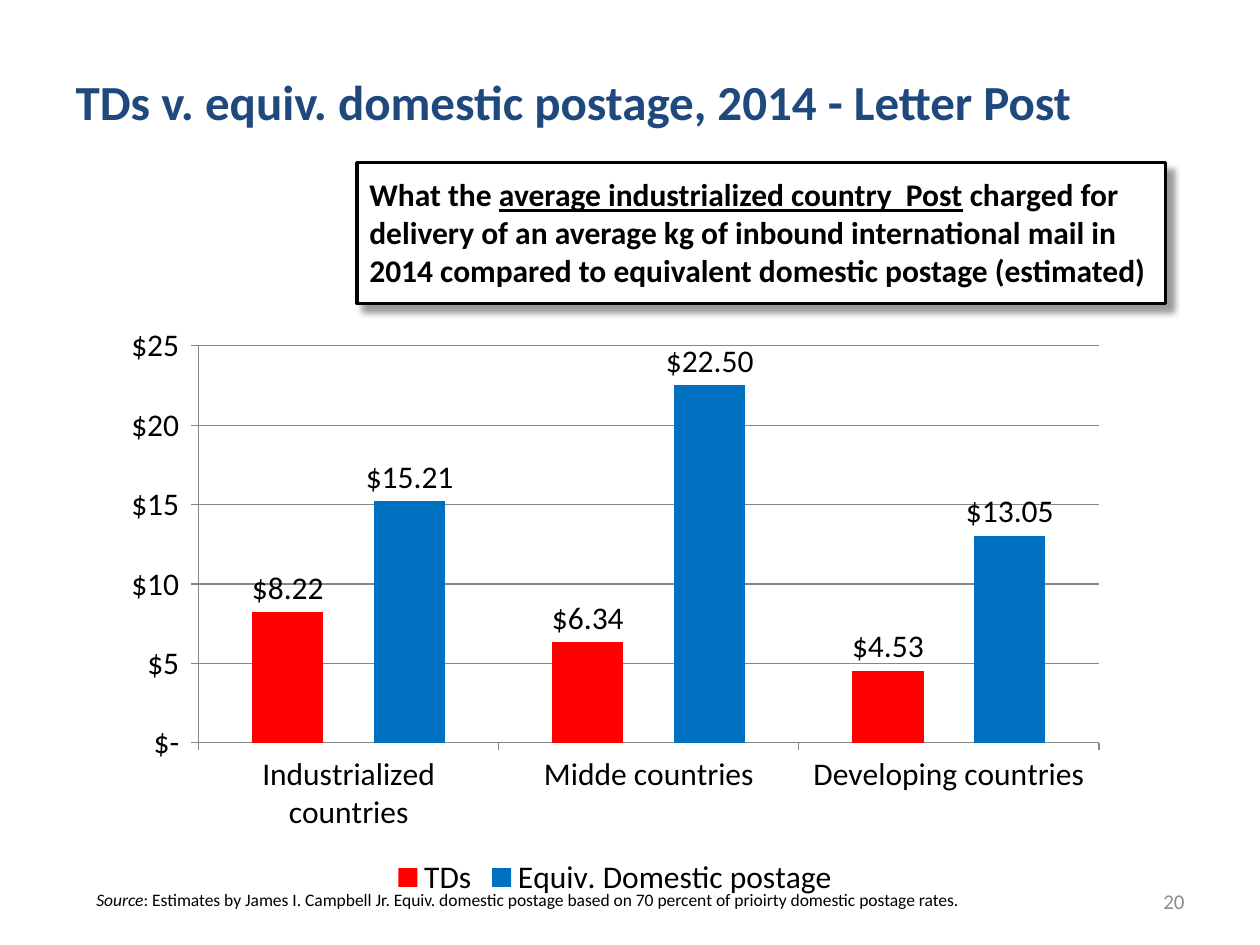
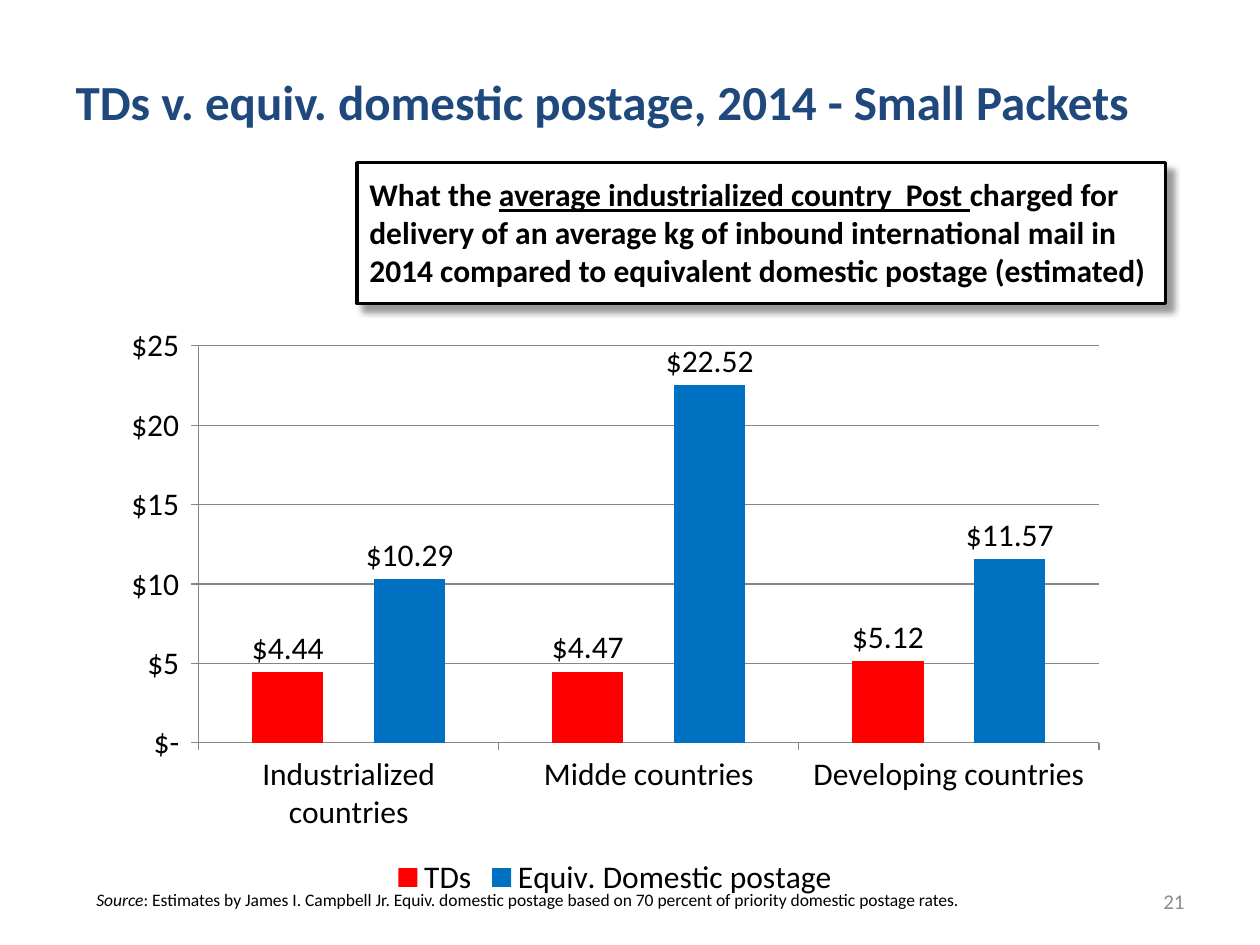
from lxml import etree
from pptx import Presentation
from pptx.chart.data import CategoryChartData
from pptx.dml.color import RGBColor
from pptx.enum.chart import XL_CHART_TYPE, XL_LABEL_POSITION, XL_LEGEND_POSITION, XL_TICK_MARK
from pptx.enum.shapes import MSO_SHAPE
from pptx.enum.text import MSO_ANCHOR, PP_ALIGN
from pptx.oxml.ns import qn
from pptx.util import Pt

FONT = "Calibri"
COLORS = {
    "title": "1F497D",
    "text": "000000",
    "paper": "FFFFFF",
    "number": "8C8C8C",
    "grid": "868686",
    "tds": "FF0000",
    "domestic": "0070C0",
}

# Boxes: left, top, width, height in points
TITLE_BOX = (36, 28.8, 648, 57.6)
CALLOUT_BOX = (204, 93, 462, 80.5)
CHART_BOX = (63.5, 180, 576, 336)
SOURCE_BOX = (48, 504.7, 606, 19.4)
NUMBER_BOX = (516, 500.5, 168, 28.8)

CATEGORIES = ["Industrialized countries", "Midde countries", "Developing countries"]
SLIDES = [
    {
        "title": "TDs v. equiv. domestic postage, 2014 - Letter Post",
        "callout": ["What the ", "average industrialized country  Post", " charged for"],
        "tds": [8.22, 6.34, 4.53],
        "domestic": [15.21, 22.50, 13.05],
        "rates": "prioirty",
        "number": 20,
    },
    {
        "title": "TDs v. equiv. domestic postage, 2014 - Small Packets",
        "callout": ["What the ", "average industrialized country  Post ", "charged for"],
        "tds": [4.44, 4.47, 5.12],
        "domestic": [10.29, 22.52, 11.57],
        "rates": "priority",
        "number": 21,
    },
]
CALLOUT_END = (" delivery of an average kg of inbound international mail in 2014"
               " compared to equivalent domestic postage (estimated)")


def rgb(name):
    return RGBColor.from_string(COLORS[name])


def style(font, size, color="text", bold=False):
    font.name, font.size, font.bold = FONT, Pt(size), bold
    font.color.rgb = rgb(color)


def add_run(p, text, size, **kwargs):
    r = p.add_run()
    r.text = text
    style(r.font, size, **kwargs)
    return r


def add_text_frame(slide, box):
    tf = slide.shapes.add_textbox(*map(Pt, box)).text_frame
    tf.word_wrap = True
    return tf


def add_title(slide, box, text):
    sp = slide.shapes.title
    sp.left, sp.top, sp.width, sp.height = map(Pt, box)
    tf = sp.text_frame
    tf.text = text
    tf.vertical_anchor = MSO_ANCHOR.MIDDLE
    p = tf.paragraphs[0]
    p.alignment = PP_ALIGN.LEFT
    style(p.runs[0].font, 28, "title", bold=True)


def add_drop_shadow(sp):
    sp.shadow.inherit = False
    effects = sp._element.spPr.find(qn("a:effectLst"))
    shadow = etree.SubElement(effects, qn("a:outerShdw"), blurRad=str(Pt(4)), dist=str(Pt(5)),
                              dir=str(45 * 60000), algn="tl", rotWithShape="0")
    color = etree.SubElement(shadow, qn("a:srgbClr"), val=COLORS["text"])
    etree.SubElement(color, qn("a:alpha"), val="40000")


def add_callout(slide, box, parts):
    """Bordered box whose second text part is underlined."""
    sp = slide.shapes.add_shape(MSO_SHAPE.RECTANGLE, *map(Pt, box))
    sp.fill.solid()
    sp.fill.fore_color.rgb = rgb("paper")
    sp.line.color.rgb = rgb("text")
    sp.line.width = Pt(2)
    add_drop_shadow(sp)
    tf = sp.text_frame
    tf.word_wrap = True
    tf.vertical_anchor = MSO_ANCHOR.TOP
    tf.margin_left = tf.margin_top = tf.margin_right = tf.margin_bottom = Pt(7.2)
    p = tf.paragraphs[0]
    p.alignment = PP_ALIGN.LEFT
    before, underlined, after = parts
    add_run(p, before, 18, bold=True)
    add_run(p, underlined, 18, bold=True).font.underline = True
    add_run(p, after + CALLOUT_END, 18, bold=True)


def add_postage_chart(slide, box, tds, domestic):
    data = CategoryChartData()
    data.categories = CATEGORIES
    data.add_series("TDs", tds)
    data.add_series("Equiv. Domestic postage", domestic)
    chart = slide.shapes.add_chart(XL_CHART_TYPE.COLUMN_CLUSTERED, *map(Pt, box), data).chart
    style(chart.font, 18)
    chart.has_title = False
    chart.has_legend = True
    chart.legend.position = XL_LEGEND_POSITION.BOTTOM
    chart.legend.include_in_layout = False

    values = chart.value_axis
    values.minimum_scale, values.maximum_scale, values.major_unit = 0, 25, 5
    values.tick_labels.number_format = '"$"#,##0_);("$"#,##0);"$-"_)'
    values.tick_labels.number_format_is_linked = False
    values.major_gridlines.format.line.color.rgb = rgb("grid")
    for axis in (chart.category_axis, values):
        axis.major_tick_mark = XL_TICK_MARK.OUTSIDE
        axis.format.line.color.rgb = rgb("grid")

    plot = chart.plots[0]
    plot.gap_width, plot.overlap = 150, -71
    plot.vary_by_categories = False
    for series, color in zip(plot.series, ("tds", "domestic")):
        series.format.fill.solid()
        series.format.fill.fore_color.rgb = rgb(color)
        labels = series.data_labels
        labels.show_value = True
        labels.number_format = '"$"#,##0.00'
        labels.number_format_is_linked = False
        labels.position = XL_LABEL_POSITION.OUTSIDE_END
        style(labels.font, 18)


def add_source(slide, box, rates):
    p = add_text_frame(slide, box).paragraphs[0]
    add_run(p, "Source", 10).font.italic = True
    add_run(p, ": Estimates by James I. Campbell Jr. Equiv. domestic postage based on"
               f" 70 percent of {rates} domestic postage rates.", 10)


def add_number(slide, box, number):
    tf = add_text_frame(slide, box)
    tf.vertical_anchor = MSO_ANCHOR.MIDDLE
    p = tf.paragraphs[0]
    p.alignment = PP_ALIGN.RIGHT
    add_run(p, str(number), 12, color="number")


def add_postage_slide(prs, content):
    slide = prs.slides.add_slide(prs.slide_layouts.get_by_name("Title Only"))
    add_title(slide, TITLE_BOX, content["title"])
    add_postage_chart(slide, CHART_BOX, content["tds"], content["domestic"])
    add_number(slide, NUMBER_BOX, content["number"])
    add_callout(slide, CALLOUT_BOX, content["callout"])
    add_source(slide, SOURCE_BOX, content["rates"])


def main():
    prs = Presentation()
    prs.slide_width, prs.slide_height = Pt(720), Pt(540)
    for content in SLIDES:
        add_postage_slide(prs, content)
    prs.save("out.pptx")


if __name__ == "__main__":
    main()
